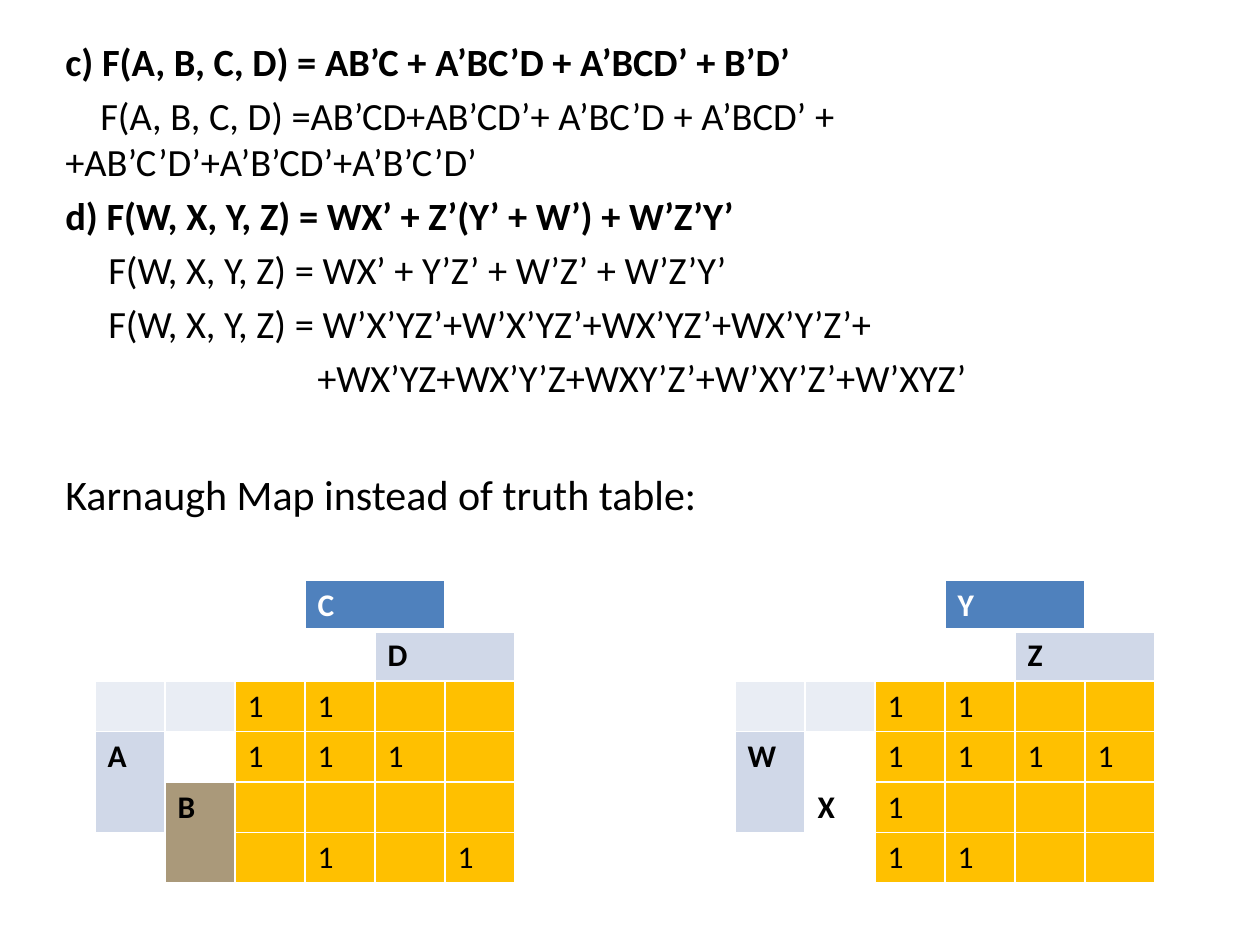
from dataclasses import dataclass

from lxml import etree
from pptx import Presentation
from pptx.dml.color import RGBColor
from pptx.oxml.ns import qn
from pptx.util import Emu, Pt

EMU_PER_PX = 914400 / 126
GRID = 6          # rows and columns in each Karnaugh map
FIRST_VALUE = 2   # row and column where the values start


@dataclass(frozen=True)
class Theme:
    font: str = "Calibri"
    formula_size: int = 22
    caption_size: int = 24
    cell_size: int = 18
    text: str = "000000"
    white: str = "FFFFFF"
    header: str = "4F81BD"
    label: str = "D0D8E8"
    pale: str = "E9EDF4"
    value: str = "FFC000"
    tan: str = "AA997A"


THEME = Theme()

# text, bold, left margin px, first-line indent px; \v is a line break
FORMULAS = [
    ("c) F(A, B, C, D) = AB’C + A’BC’D + A’BCD’ + B’D’", True, 0, 0),
    ("F(A, B, C, D) =AB’CD+AB’CD’+ A’BC’D + A’BCD’ +\v"
     "+AB’C’D’+A’B’CD’+A’B’C’D’", False, 0, 35),
    ("d) F(W, X, Y, Z) = WX’ + Z’(Y’ + W’) + W’Z’Y’", True, 0, 0),
    ("F(W, X, Y, Z) = WX’ + Y’Z’ + W’Z’ + W’Z’Y’", False, 43, 0),
    ("F(W, X, Y, Z) = W’X’YZ’+W’X’YZ’+WX’YZ’+WX’Y’Z’+", False, 43, 0),
    ("+WX’YZ+WX’Y’Z+WXY’Z’+W’XY’Z’+W’XYZ’", False, 252, 0),
]


def px(length):
    return Emu(round(length * EMU_PER_PX))


def write(paragraph, text, size, color=THEME.text, bold=False,
          before=0, margin=0, indent=0):
    paragraph.text = text
    paragraph.space_before = Pt(before)
    paragraph.font.name = THEME.font
    paragraph.font.size = Pt(size)
    paragraph.font.bold = bold
    paragraph.font.color.rgb = RGBColor.from_string(color)
    properties = paragraph._p.get_or_add_pPr()
    properties.set("marL", str(px(margin)))
    properties.set("indent", str(px(indent)))


def add_formulas(slide):
    frame = slide.shapes.add_textbox(px(53), px(32), px(1165), px(860)).text_frame
    frame.word_wrap = True
    paragraph = frame.paragraphs[0]
    for text, bold, margin, indent in FORMULAS:
        write(paragraph, text, THEME.formula_size, bold=bold, before=4.4,
              margin=margin, indent=indent)
        paragraph = frame.add_paragraph()
    write(paragraph, "Karnaugh Map instead of truth table:",
          THEME.caption_size, before=39)


def set_fill(cell, color):
    if color:
        cell.fill.solid()
        cell.fill.fore_color.rgb = RGBColor.from_string(color)
    else:
        cell.fill.background()


def set_borders(cell, bottom_width):
    properties = cell._tc.get_or_add_tcPr()
    widths = {"a:lnL": 1, "a:lnR": 1, "a:lnT": 1, "a:lnB": bottom_width}
    for position, (side, width) in enumerate(widths.items()):
        line = etree.Element(qn(side), w=str(Pt(width)))
        paint = etree.SubElement(line, qn("a:solidFill"))
        etree.SubElement(paint, qn("a:srgbClr"), val=THEME.white)
        properties.insert(position, line)


def base_fill(row, column):
    if row >= FIRST_VALUE and column >= FIRST_VALUE:
        return THEME.value
    return THEME.pale if row == FIRST_VALUE else None


def add_karnaugh_map(slide, left, variables, values, last_fill):
    table = slide.shapes.add_table(GRID, GRID, px(left), px(580),
                                   px(70 * GRID), px(50 * GRID)).table
    table.first_row = False
    table.horz_banding = False
    for column in table.columns:
        column.width = px(70)

    # Grid, with a 1 for each minterm
    for row in range(GRID):
        table.rows[row].height = px(50)
        for column in range(GRID):
            cell = table.cell(row, column)
            set_fill(cell, base_fill(row, column))
            set_borders(cell, 3 if row == 0 else 1)
            is_value = row >= FIRST_VALUE and column >= FIRST_VALUE
            mark = values[row - FIRST_VALUE][column - FIRST_VALUE] if is_value else "."
            write(cell.text_frame.paragraphs[0], mark.strip("."), THEME.cell_size)

    # Variable labels, each spanning two cells
    spans = [
        ((3, 0), (4, 0), THEME.label, THEME.text),
        ((4, 1), (5, 1), last_fill, THEME.text),
        ((0, 3), (0, 4), THEME.header, THEME.white),
        ((1, 4), (1, 5), THEME.label, THEME.text),
    ]
    for variable, (start, end, fill, color) in zip(variables, spans):
        label = table.cell(*start)
        label.merge(table.cell(*end))
        set_fill(label, fill)
        write(label.text_frame.paragraphs[0], variable, THEME.cell_size,
              color=color, bold=True)


def main():
    deck = Presentation()
    deck.slide_width, deck.slide_height = px(1260), px(945)
    slide = deck.slides.add_slide(deck.slide_layouts[6])
    add_formulas(slide)
    add_karnaugh_map(slide, 95, "ABCD", ["11..", "111.", "....", ".1.1"], THEME.tan)
    add_karnaugh_map(slide, 735, "WXYZ", ["11..", "1111", "1...", "11.."], None)
    deck.save("out.pptx")


if __name__ == "__main__":
    main()
